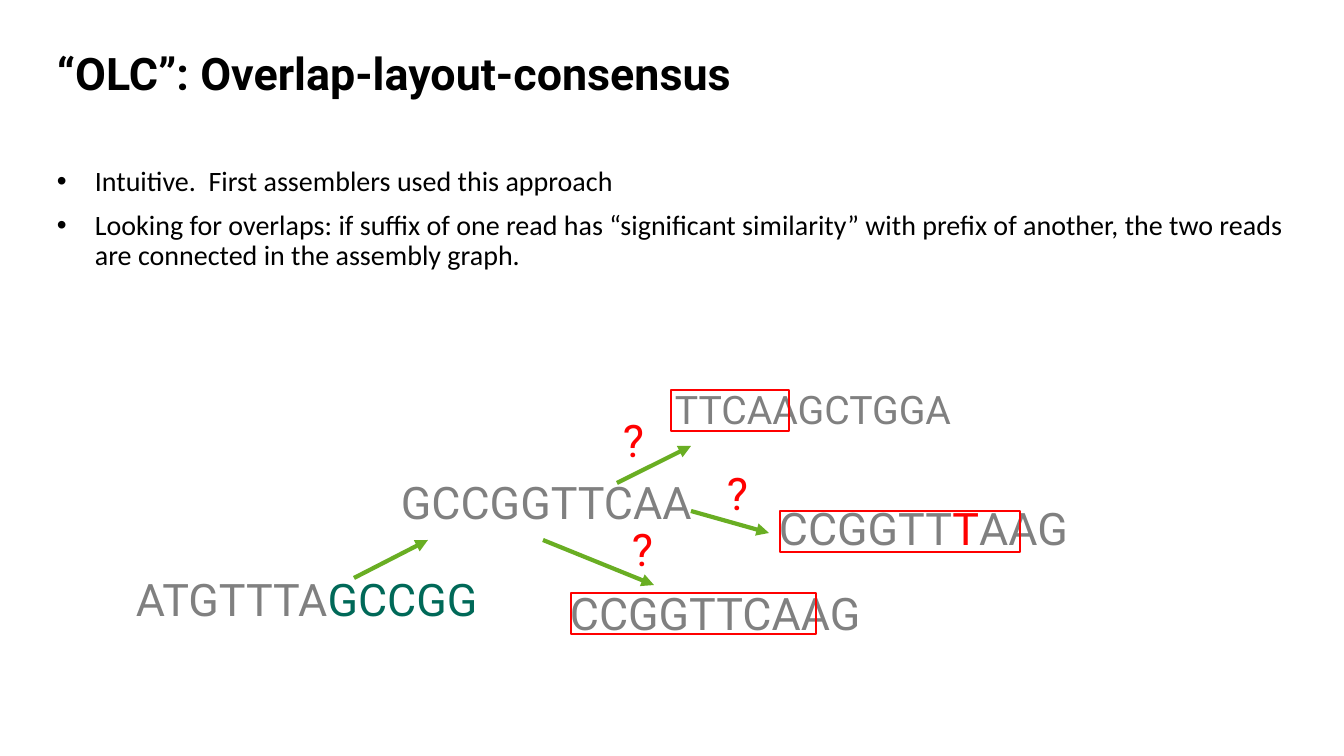
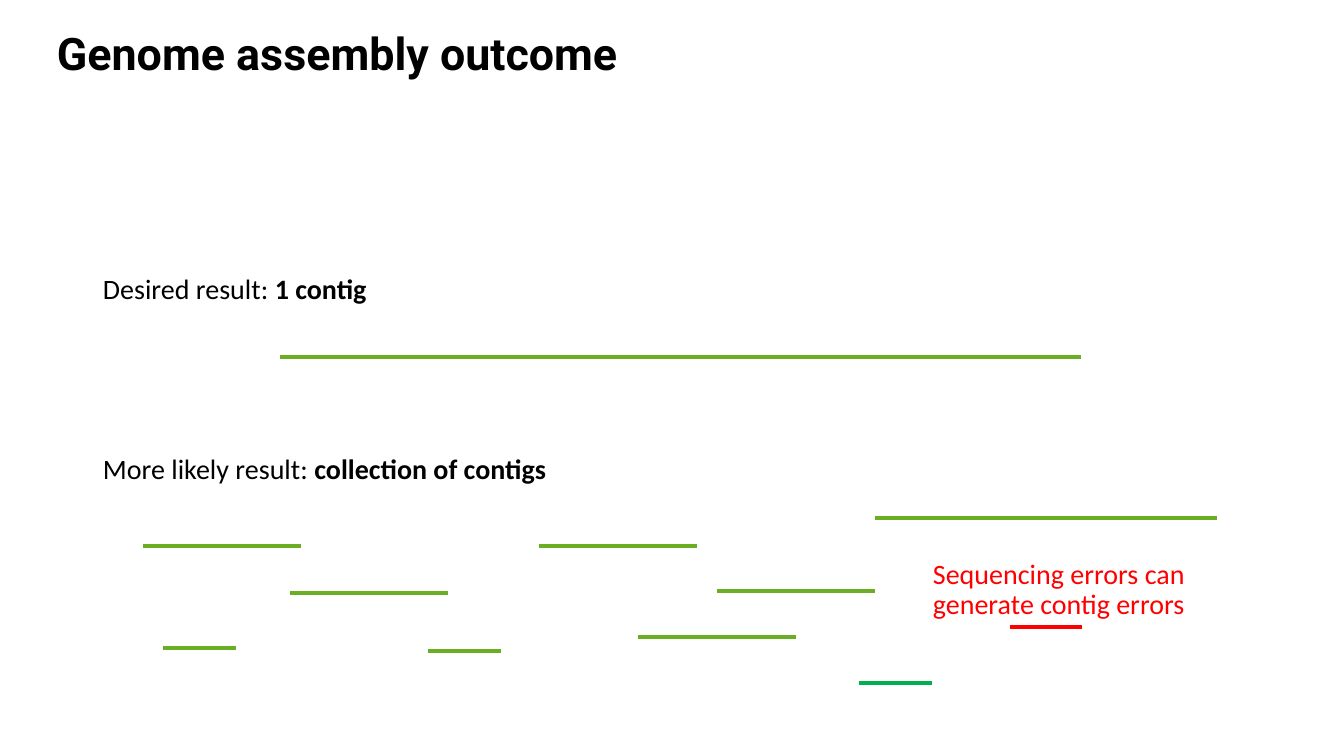
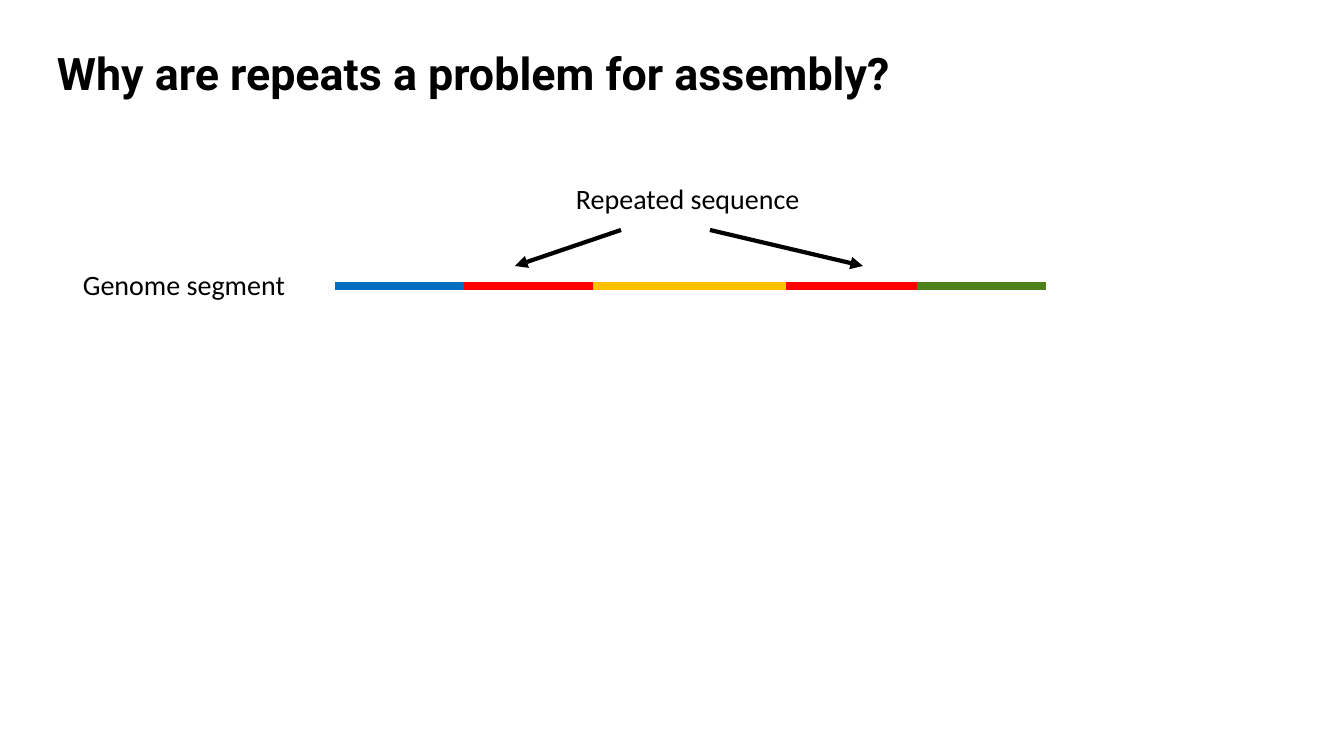
import lxml.etree
import pptx
import pptx.dml.color
import pptx.enum.shapes
import pptx.enum.text
import pptx.oxml.ns
import pptx.util

PX = 914400 / 100.8  # EMU in one px
BLACK, RED, GREY, GREEN = "000000", "FF0000", "808080", "69AE23"
HEADING_FONT, BODY_FONT = "Roboto", "Calibri"


def color(value):
    return pptx.dml.color.RGBColor.from_string(value)


def emu(*lengths):
    return [round(length * PX) for length in lengths]


deck = pptx.Presentation()
deck.slide_width, deck.slide_height = emu(1344, 756)
qn = pptx.oxml.ns.qn


def add_text(page, place, paragraphs, size=20, font=BODY_FONT, wrap=True, bullets=False):
    """Each paragraph is a list of (text, colour, bold) spans."""
    box = page.shapes.add_textbox(*emu(*place))
    frame = box.text_frame
    frame.word_wrap = wrap
    for number, spans in enumerate(paragraphs):
        para = frame.paragraphs[0] if number == 0 else frame.add_paragraph()
        para.line_spacing = 0.9
        if number:
            para.space_before = pptx.util.Pt(10)
        if bullets:
            properties = para._p.get_or_add_pPr()
            indent = emu(38)[0]
            properties.set("marL", str(indent))
            properties.set("indent", str(-indent))
            lxml.etree.SubElement(properties, qn("a:buFont")).set("typeface", "Arial")
            lxml.etree.SubElement(properties, qn("a:buChar")).set("char", "•")
        for text, hue, bold in spans:
            span = para.add_run()
            span.text = text
            span.font.name = font
            span.font.size = pptx.util.Pt(size)
            span.font.bold = bold
            span.font.color.rgb = color(hue)
    return box


def add_line(page, ends, hue=GREEN, width=3, arrow=False):
    line = page.shapes.add_connector(pptx.enum.shapes.MSO_CONNECTOR.STRAIGHT, *emu(*ends))
    line.line.color.rgb = color(hue)
    line.line.width = pptx.util.Pt(width)
    if arrow:
        lxml.etree.SubElement(line.line._get_or_add_ln(), qn("a:tailEnd")).set("type", "triangle")
    lxml.etree.SubElement(line._element.spPr, qn("a:effectLst"))


# Pages with their shared title style
pages = []
for title, top in [
    ("“OLC”: Overlap-layout-consensus", 24),
    ("Genome assembly outcome", 4),
    ("Why are repeats a problem for assembly?", 24),
]:
    page = deck.slides.add_slide(deck.slide_layouts[6])
    heading = add_text(page, (47, top, 1141, 105), [[(title, BLACK, True)]], 32, HEADING_FONT)
    heading.text_frame.vertical_anchor = pptx.enum.text.MSO_ANCHOR.MIDDLE
    pages.append(page)
overlap_page, outcome_page, repeats_page = pages

# Overlap: bullets
bullet_texts = [
    "Intuitive.  First assemblers used this approach",
    "Looking for overlaps: if suffix of one read has “significant similarity” with prefix "
    "of another, the two reads are connected in the assembly graph.",
]
add_text(overlap_page, (47, 162, 1252, 518),
         [[(text, BLACK, False)] for text in bullet_texts], bullets=True)

# Overlap: reads and question marks
for place, size, spans in [
    ((126, 573, 649, 65), 32, [("ATGTTTA", GREY), ("GCCGG", "006958")]),
    ((391, 476, 649, 65), 32, [("GCCGGTTCAA", GREY)]),
    ((560, 587, 672, 65), 32, [("CCGGTTCAAG", GREY)]),
    ((665, 386, 672, 53), 28, [("TTCAAGCTGGA", GREY)]),
    ((769, 502, 575, 65), 32, [("CCGGTT", GREY), ("T", RED), ("AAG", GREY)]),
    ((613, 414, 100, 65), 32, [("?", RED)]),
    ((717, 467, 100, 65), 32, [("?", RED)]),
    ((622, 523, 100, 65), 32, [("?", RED)]),
]:
    add_text(overlap_page, place, [[(text, hue, False) for text, hue in spans]],
             size, HEADING_FONT)

# Overlap: arrows between reads
for ends in [(354, 578, 428, 540), (543, 540, 654, 585),
             (617, 483, 691, 446), (691, 511, 769, 533)]:
    add_line(overlap_page, ends, arrow=True)

# Overlap: frames around the matching prefixes
for left, top, width in [(671, 390, 118), (571, 593, 245), (780, 511, 240)]:
    frame = overlap_page.shapes.add_shape(
        pptx.enum.shapes.MSO_SHAPE.RECTANGLE, *emu(left, top, width, 41))
    frame.shadow.inherit = False
    frame.fill.background()
    frame.line.color.rgb = color(RED)
    frame.line.width = pptx.util.Pt(1.5)

# Outcome: captions
for top, width, wrap, lead, result in [
    (270, 286, False, "Desired result: ", "1 contig"),
    (450, 672, True, "More likely result: ", "collection of contigs"),
]:
    add_text(outcome_page, (93, top, width, 40),
             [[(lead, BLACK, False), (result, BLACK, True)]], wrap=wrap)
add_text(outcome_page, (923, 555, 340, 72),
         [[("Sequencing errors can generate contig errors", RED, False)]])

# Outcome: contigs
for left, y, length, hue in [
    (280, 357, 801, GREEN),
    (143, 546, 158, GREEN), (290, 593, 158, GREEN), (539, 546, 158, GREEN),
    (638, 637, 158, GREEN), (717, 591, 158, GREEN), (875, 518, 342, GREEN),
    (428, 651, 73, GREEN), (163, 648, 73, GREEN),
    (1010, 627, 72, RED), (859, 683, 73, "00B050"),
]:
    add_line(outcome_page, (left, y, left + length, y), hue)

# Repeats: labels and arrows
for place, label in [((73, 266, 225, 40), "Genome segment"),
                     ((566, 180, 246, 40), "Repeated sequence")]:
    add_text(repeats_page, place, [[(label, BLACK, False)]], wrap=False)
for ends in [(621, 230, 515, 266), (710, 230, 863, 266)]:
    add_line(repeats_page, ends, BLACK, arrow=True)

# Repeats: genome made of adjoining segments
left = 335
for right, hue in [(464, "0070C0"), (593, RED), (786, "FFC000"), (917, RED), (1046, "4F831A")]:
    add_line(repeats_page, (left, 286, right, 286), hue, 6)
    left = right

deck.save("out.pptx")
